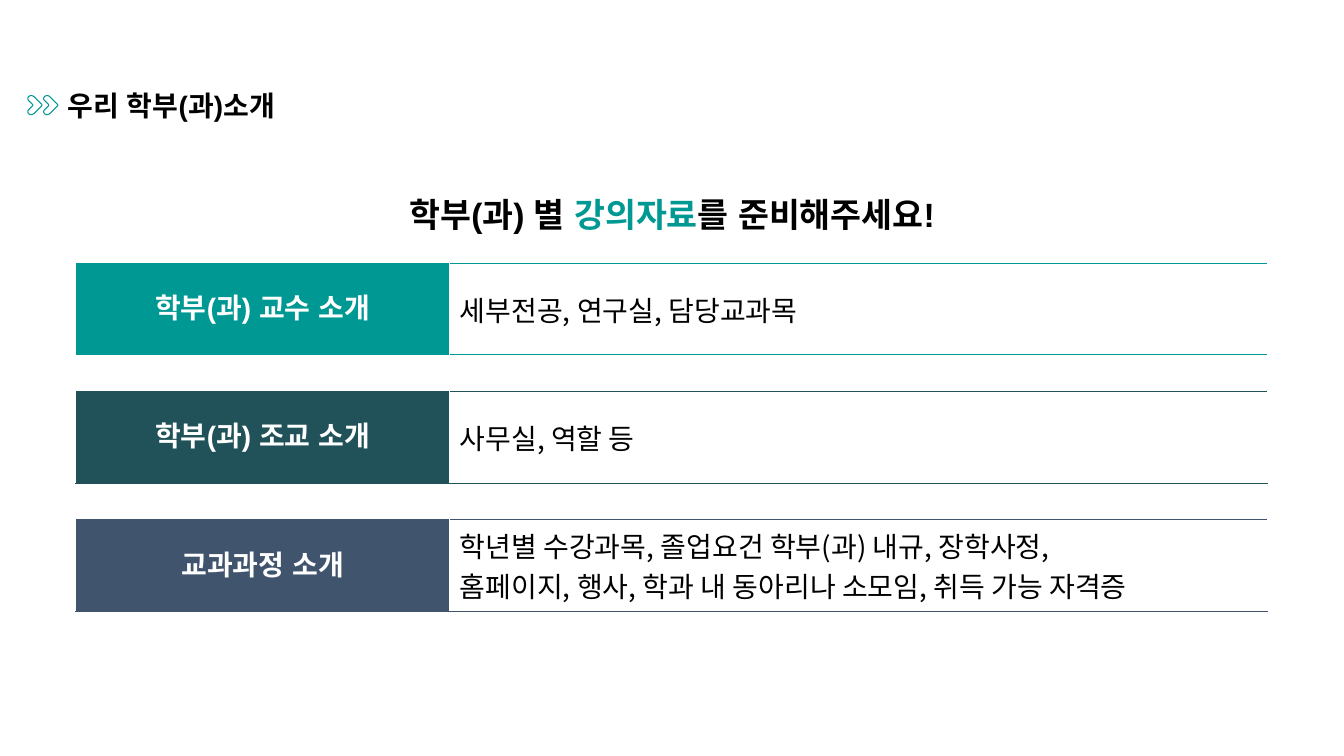
from pptx import Presentation
from pptx.dml.color import RGBColor
from pptx.enum.text import MSO_ANCHOR, MSO_AUTO_SIZE, PP_ALIGN
from pptx.oxml import parse_xml
from pptx.oxml.ns import nsdecls
from pptx.util import Cm, Pt

LEFT, CENTER = PP_ALIGN.LEFT, PP_ALIGN.CENTER
MIDDLE = MSO_ANCHOR.MIDDLE
FIT_SHAPE = MSO_AUTO_SIZE.SHAPE_TO_FIT_TEXT

COLORS = {"teal": "009892", "dark": "225259", "slate": "40556D",
          "black": "000000", "white": "FFFFFF"}
HEAD_FONT, BODY_FONT = "Arial", "Noto Sans CJK KR"

# label, description, colour, rule width in points
ROWS = [
    ("학부(과) 교수 소개", "세부전공, 연구실, 담당교과목", "teal", 0.75),
    ("학부(과) 조교 소개", "사무실, 역할 등", "dark", 0.75),
    ("교과과정 소개",
     "학년별 수강과목, 졸업요건 학부(과) 내규, 장학사정,\n"
     "홈페이지, 행사, 학과 내 동아리나 소모임, 취득 가능 자격증", "slate", 0.5),
]

# Chevron outline in cm: 2 numbers are a line end, 6 a Bézier curve
CHEVRON_START = (0.1, 0)
CHEVRON = [
    (0.02, 0, -0.02, 0.08, 0.04, 0.13),
    (0.13, 0.22),
    (0.14, 0.23, 0.14, 0.25, 0.13, 0.26),
    (0.04, 0.35),
    (-0.02, 0.4, 0.02, 0.48, 0.1, 0.48),
    (0.12, 0.48, 0.14, 0.47, 0.16, 0.46),
    (0.36, 0.26),
    (0.37, 0.25, 0.37, 0.23, 0.36, 0.22),
    (0.16, 0.02),
    (0.14, 0.01, 0.12, 0, 0.1, 0),
]


def rgb(name):
    return RGBColor.from_string(COLORS[name])


def format_run(r, size, font, color, bold):
    r.font.size, r.font.bold, r.font.name = Pt(size), bold, font
    r.font.color.rgb = rgb(color)
    latin = r._r.rPr.find("{*}latin")
    latin.addnext(parse_xml(f'<a:ea {nsdecls("a")} typeface="{font}"/>'))


def add_heading(s, x, y, w, h, parts, size, align, wrap):
    tf = s.shapes.add_textbox(Cm(x), Cm(y), Cm(w), Cm(h)).text_frame
    tf.word_wrap, tf.auto_size = wrap, FIT_SHAPE
    p = tf.paragraphs[0]
    p.alignment = align
    for text, color in parts:
        r = p.add_run()
        r.text = text
        format_run(r, size, HEAD_FONT, color, True)


def set_borders(cell, color, width):
    tcPr = cell._tc.get_or_add_tcPr()
    sides = [("lnL", "white", 1), ("lnR", "white", 1),
             ("lnT", color, width), ("lnB", color, width)]
    for i, (tag, name, points) in enumerate(sides):
        tcPr.insert(i, parse_xml(
            f'<a:{tag} {nsdecls("a")} w="{Pt(points)}"><a:solidFill>'
            f'<a:srgbClr val="{COLORS[name]}"/></a:solidFill></a:{tag}>'))


def fill_cell(cell, text, fill, font, color, bold, align):
    cell.text_frame.text = text
    cell.vertical_anchor = MIDDLE
    cell.fill.solid()
    cell.fill.fore_color.rgb = rgb(fill)
    for p in cell.text_frame.paragraphs:
        p.alignment = align
        for r in p.runs:
            format_run(r, 20, font, color, bold)


def add_topic(s, y, label, description, color, rule):
    table = s.shapes.add_table(1, 2, Cm(1.91), Cm(y), Cm(30.04), Cm(2.31)).table
    table.first_row = table.horz_banding = False
    table.columns[0].width, table.columns[1].width = Cm(9.42), Cm(20.62)
    fill_cell(table.cell(0, 0), label, color, HEAD_FONT, "white", True, CENTER)
    fill_cell(table.cell(0, 1), description, "white", BODY_FONT, "black", False, LEFT)
    for cell in table.iter_cells():
        set_borders(cell, color, rule)


def curve_points(start, curve, steps=8):
    x0, y0 = start
    x1, y1, x2, y2, x3, y3 = curve
    for i in range(1, steps + 1):
        t = i / steps
        a, b, c, d = (1 - t) ** 3, 3 * t * (1 - t) ** 2, 3 * t * t * (1 - t), t ** 3
        yield a * x0 + b * x1 + c * x2 + d * x3, a * y0 + b * y1 + c * y2 + d * y3


def add_chevron(s, x, y):
    points = [CHEVRON_START]
    for part in CHEVRON:
        points += [part] if len(part) == 2 else list(curve_points(points[-1], part))
    points = [(Cm(x + px), Cm(y + py)) for px, py in points]
    builder = s.shapes.build_freeform(*points[0])
    builder.add_line_segments(points[1:], close=True)
    sp = builder.convert_to_shape()
    sp.shadow.inherit = False
    sp.fill.background()
    sp.line.color.rgb = rgb("teal")
    sp.line.width = Pt(0.75)


def main():
    prs = Presentation()
    prs.slide_width, prs.slide_height = Cm(33.87), Cm(19.05)
    s = prs.slides.add_slide(prs.slide_layouts[6])

    # Topic rows
    for i, row in enumerate(ROWS):
        add_topic(s, 6.63 + 3.23 * i, *row)

    # Headings
    add_heading(s, 9.37, 4.75, 15.14, 1.27,
                [("학부(과) 별 ", "black"), ("강의자료", "teal"),
                 ("를 준비해주세요!", "black")], 24, CENTER, False)
    add_heading(s, 1.45, 2.11, 6.25, 1.12,
                [("우리 학부(과)소개", "black")], 20, LEFT, True)

    # Double chevron beside the title
    for i in range(2):
        add_chevron(s, 0.69 + 0.4 * i, 2.41)

    prs.save("out.pptx")


if __name__ == "__main__":
    main()
